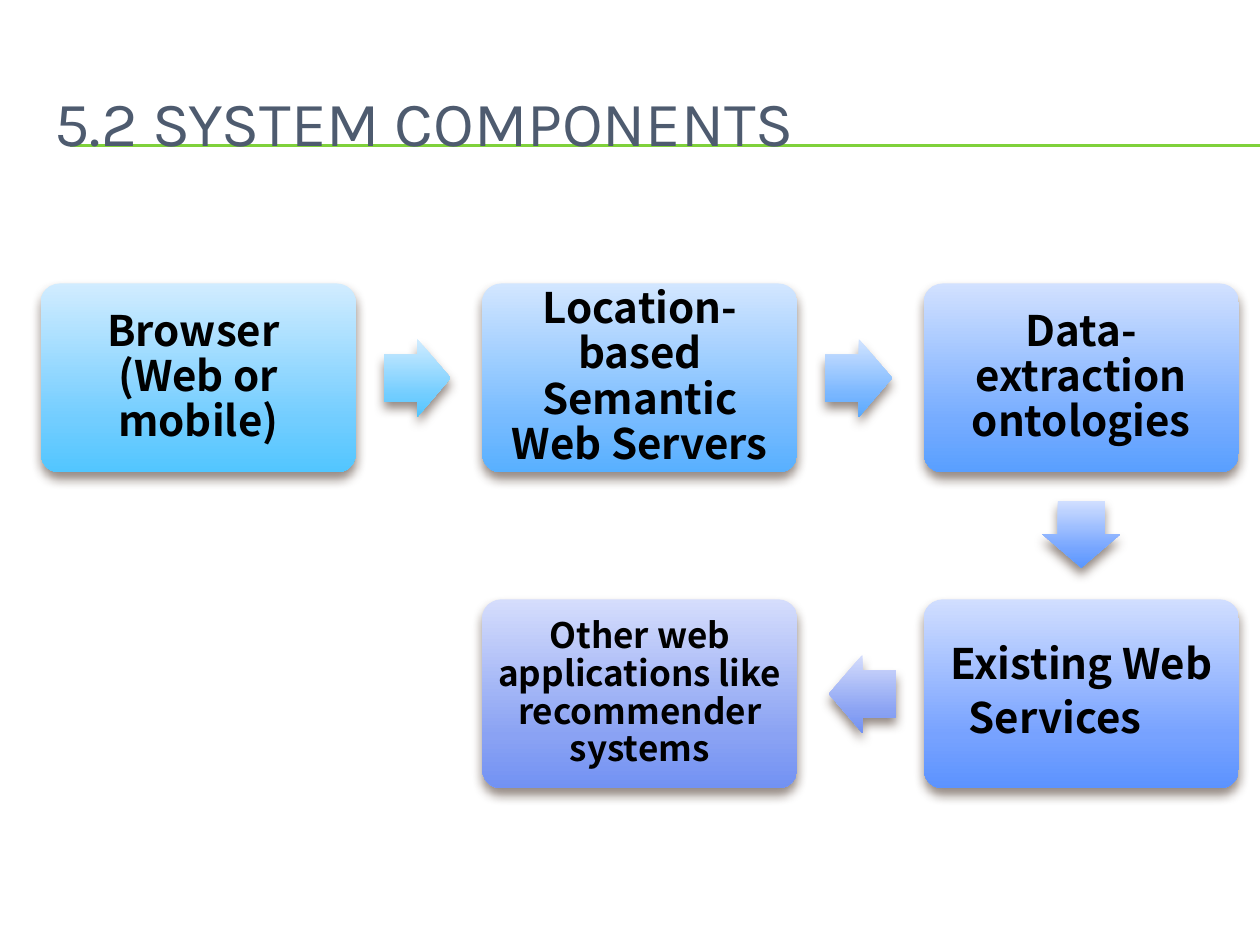
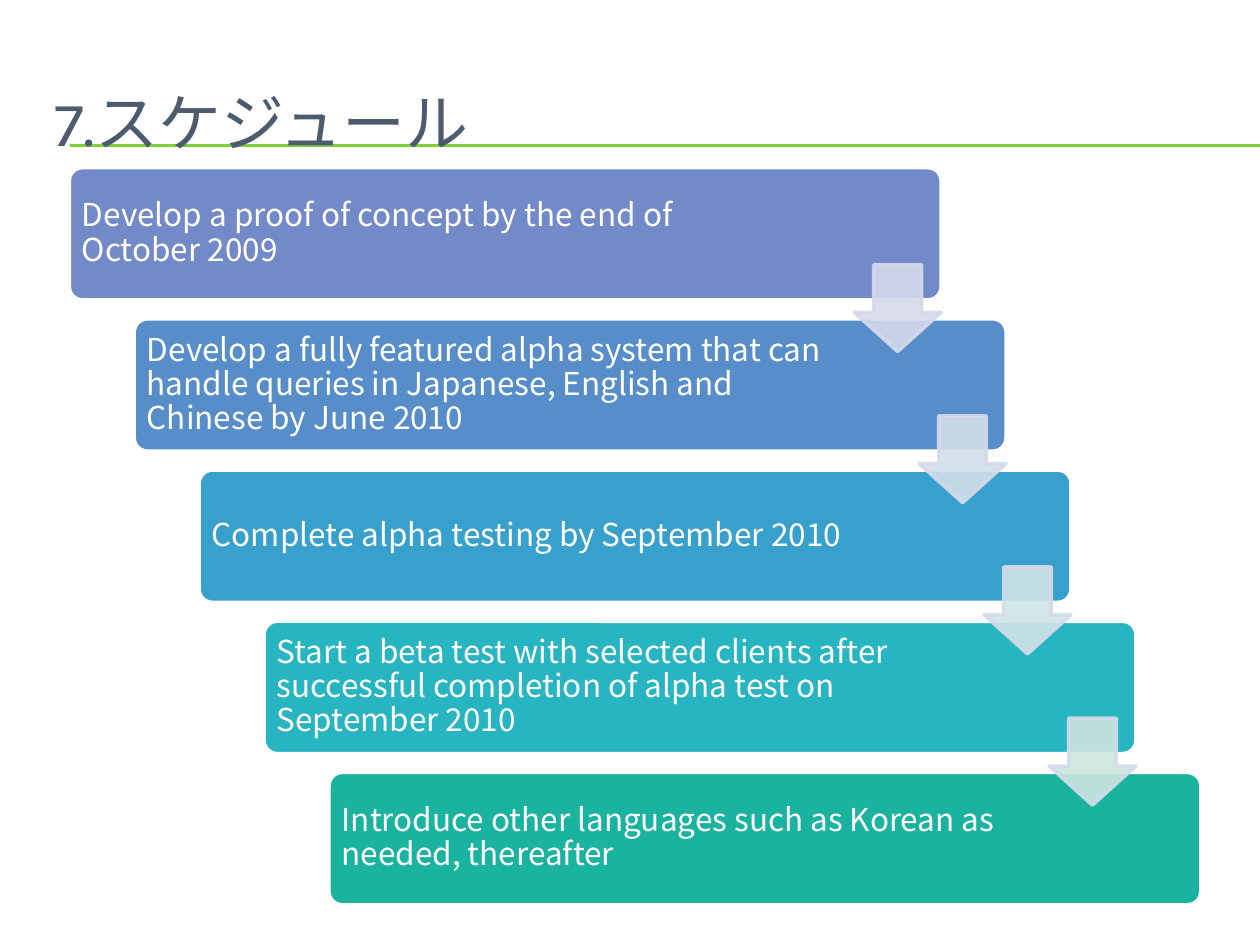
from dataclasses import dataclass
from math import atan2, cos, degrees, sin
from typing import Any

from lxml.etree import SubElement
from pptx import Presentation
from pptx.dml.color import RGBColor
from pptx.enum.shapes import MSO_CONNECTOR as Connector, MSO_SHAPE as Preset
from pptx.enum.text import MSO_ANCHOR as Anchor, MSO_AUTO_SIZE as AutoSize, PP_ALIGN as Align
from pptx.oxml.ns import qn
from pptx.util import Pt


# Colours, fonts and type sizes
@dataclass(frozen=True)
class Theme:
    title_color: str = "4E5B6F"
    rule_color: str = "7FD13B"
    shadow_color: str = "4E3B30"
    dark_text: str = "000000"
    light_text: str = "FFFFFF"
    arrow_outline: str = "D5DAEB"
    title_font: str = "Karla"
    body_font: str = "Noto Sans CJK JP"
    title_size: float = 36
    component_size: float = 24
    small_component_size: float = 20
    spacer_size: float = 30
    step_size: float = 18


THEME = Theme()
Gradient = tuple[str, str, str]


@dataclass(frozen=True)
class Box:
    left: float
    top: float
    width: float
    height: float

    @property
    def center(self) -> tuple[float, float]:
        return self.left + self.width / 2, self.top + self.height / 2

    def lengths(self) -> list[int]:
        return [Pt(value) for value in (self.left, self.top, self.width, self.height)]


@dataclass(frozen=True)
class Component:
    text: str
    column: int
    row: int
    gradient: Gradient
    size: float = THEME.component_size
    inset: float = 7.2
    spacer: str = ""

    @property
    def box(self) -> Box:
        return Box(23.3 + 252.3 * self.column, 162 + 180.5 * self.row, 180, 108)


@dataclass(frozen=True)
class Step:
    text: str
    color: str
    arrow_color: str | None = None


VIOLET: Gradient = ("D5DDFC", "8AA2F3", "7292F3")
COMPONENTS = [
    Component("Browser \n(Web or mobile)", 0, 0, ("D1ECFF", "72CDFF", "52C6FF")),
    Component("Location-based Semantic Web Servers", 1, 0, ("D2E6FF", "77BBFF", "58B0FF")),
    Component("Data-extraction ontologies", 2, 0, ("D2E1FF", "76ACFF", "599FFF")),
    Component("Existing Web Services", 2, 1, ("D1DEFF", "77A2FF", "5C93FF"), spacer="　"),
    Component("Other web applications like recommender systems", 1, 1, VIOLET,
              size=THEME.small_component_size, inset=5.8),
]
FLOW_GRADIENTS: list[Gradient] = [
    ("D1ECFF", "72CDFF", "52C6FF"),
    ("D3E4FF", "78B6FF", "5AAAFF"),
    ("D1DFFF", "76A5FF", "5A97FF"),
    VIOLET,
]
STEPS = [
    Step("Develop a proof of concept by the end of October 2009", "738AC8", "D5DAEB"),
    Step("Develop a fully featured alpha system that can handle queries in Japanese, "
         "English and Chinese by June 2010", "578EC9", "D2DFE9"),
    Step("Complete alpha testing by September 2010", "38A0CC", "CFE4E7"),
    Step("Start a beta test with selected clients after successful completion of alpha "
         "test on September 2010", "27B5C2", "CCE5DF"),
    Step("Introduce other languages such as Korean as needed, thereafter", "1AB39F"),
]


# Formatting helpers
def apply_format(target: Any, values: dict[str, Any]) -> None:
    for name, value in values.items():
        setattr(target, name, value)


def format_font(font: Any, name: str, size: float, color: str, bold: bool = False) -> None:
    apply_format(font, {"name": name, "size": Pt(size), "bold": bold})
    font.color.rgb = RGBColor.from_string(color)


def set_color_alpha(properties: Any, percent: int) -> None:
    for color in properties.iter(qn("a:srgbClr")):
        SubElement(color, qn("a:alpha"), val=str(percent * 1000))


def add_preset(slide: Any, preset: Any, box: Box, adjustments: list[float]) -> Any:
    shape = slide.shapes.add_shape(preset, *box.lengths())
    shape.shadow.inherit = False
    for index, value in enumerate(adjustments):
        shape.adjustments[index] = value
    return shape


def paint_solid(shape: Any, fill: str, line: str) -> None:
    shape.fill.solid()
    shape.fill.fore_color.rgb = RGBColor.from_string(fill)
    shape.line.color.rgb = RGBColor.from_string(line)
    shape.line.width = Pt(2)


def paint_glossy(shape: Any, colors: Gradient) -> None:
    """Vertical three-stop gradient with a soft shadow below."""
    shape.line.fill.background()
    shape.fill.gradient()
    gradient = shape.element.spPr.find(qn("a:gradFill"))
    gradient.set("rotWithShape", "0")
    for child in list(gradient):
        gradient.remove(child)
    stops = SubElement(gradient, qn("a:gsLst"))
    for position, color in zip((0, 72, 100), colors):
        stop = SubElement(stops, qn("a:gs"), pos=str(position * 1000))
        SubElement(stop, qn("a:srgbClr"), val=color)
    SubElement(gradient, qn("a:lin"), ang="5400000", scaled="0")

    effects = shape.element.spPr.find(qn("a:effectLst"))
    shadow = SubElement(effects, qn("a:outerShdw"), blurRad=str(Pt(6)), dist=str(Pt(4)),
                        dir="5400000", rotWithShape="0")
    SubElement(shadow, qn("a:srgbClr"), val=THEME.shadow_color)
    set_color_alpha(shadow, 60)


def write_text(shape: Any, text: str, size: float, color: str, align: Any, inset: float,
               right_inset: float, bold: bool = False) -> Any:
    frame = shape.text_frame
    apply_format(frame, {
        "word_wrap": True, "auto_size": AutoSize.NONE, "vertical_anchor": Anchor.MIDDLE,
        "margin_left": Pt(inset), "margin_top": Pt(inset),
        "margin_right": Pt(right_inset), "margin_bottom": Pt(inset),
    })
    paragraph = frame.paragraphs[0]
    paragraph.text = text
    apply_format(paragraph, {"alignment": align, "line_spacing": 0.9})
    for run in paragraph.runs:
        format_font(run.font, THEME.body_font, size, color, bold)
    return paragraph


# Shared slide parts
def add_title_rules(slide: Any, layout: Any) -> None:
    """Draw the double rule and move it to the layout."""
    for index, y in enumerate((82.8, 83.5)):
        rule = slide.shapes.add_connector(Connector.STRAIGHT, Pt(40.3), Pt(y), Pt(720), Pt(y))
        rule.line.color.rgb = RGBColor.from_string(THEME.rule_color)
        rule.line.width = Pt(0.75)
        SubElement(rule.element.spPr, qn("a:effectLst"))
        for properties in rule.element.iter(qn("p:cNvPr")):
            properties.set("id", str(100 + index))
        layout.shapes.element.append(rule.element)


def add_titled_slide(presentation: Any, layout: Any, text: str) -> Any:
    slide = presentation.slides.add_slide(layout)
    title = slide.shapes.title
    left, top, width, height = Box(23.8, 36, 684, 66.2).lengths()
    apply_format(title, {"left": left, "top": top, "width": width, "height": height})
    apply_format(title.text_frame, {
        "text": text, "vertical_anchor": Anchor.MIDDLE,
        "auto_size": AutoSize.NONE, "word_wrap": True,
    })
    paragraph = title.text_frame.paragraphs[0]
    paragraph.alignment = Align.LEFT
    format_font(paragraph.runs[0].font, THEME.title_font, THEME.title_size, THEME.title_color)
    for properties in title.element.iter(qn("a:rPr")):
        SubElement(properties, qn("a:ea"), typeface=THEME.body_font)
    return slide


# System components
def draw_component(slide: Any, component: Component) -> None:
    shape = add_preset(slide, Preset.ROUNDED_RECTANGLE, component.box, [0.1])
    paint_glossy(shape, component.gradient)
    paragraph = write_text(shape, component.text, component.size, THEME.dark_text,
                           Align.CENTER, component.inset, component.inset, bold=True)
    if component.spacer:
        spacer = paragraph.add_run()
        spacer.text = component.spacer
        format_font(spacer.font, THEME.title_font, THEME.spacer_size, THEME.dark_text)


def draw_flow_arrow(slide: Any, source: Box, target: Box, gradient: Gradient) -> None:
    """Point an arrow from source to target, 1 pt nearer to the source."""
    (x1, y1), (x2, y2) = source.center, target.center
    angle = atan2(y2 - y1, x2 - x1)
    center_x = (x1 + x2) / 2 - cos(angle)
    center_y = (y1 + y2) / 2 - sin(angle)
    width, height = 38.2, 44.6
    box = Box(center_x - width / 2, center_y - height / 2, width, height)
    arrow = add_preset(slide, Preset.RIGHT_ARROW, box, [0.6, 0.5])
    arrow.rotation = degrees(angle)
    paint_glossy(arrow, gradient)


def draw_components(slide: Any) -> None:
    for component in COMPONENTS:
        draw_component(slide, component)
    for source, target, gradient in zip(COMPONENTS, COMPONENTS[1:], FLOW_GRADIENTS):
        draw_flow_arrow(slide, source.box, target.box, gradient)


# Schedule staircase
def draw_schedule(slide: Any) -> None:
    bars = [Box(39.6 + 37.1 * index, 95.8 + 86.4 * index, 498.2, 75.6)
            for index in range(len(STEPS))]
    for step, bar in zip(STEPS, bars):
        shape = add_preset(slide, Preset.ROUNDED_RECTANGLE, bar, [0.1])
        paint_solid(shape, step.color, THEME.light_text)
        write_text(shape, step.text, THEME.step_size, THEME.light_text, Align.LEFT, 5, 91.4)

    side = 49.7
    for step, bar in zip(STEPS, bars):
        if step.arrow_color:
            box = Box(bar.left + bar.width - side, bar.top + 55.4, side, side)
            arrow = add_preset(slide, Preset.DOWN_ARROW, box, [0.55, 0.45])
            paint_solid(arrow, step.arrow_color, THEME.arrow_outline)
            set_color_alpha(arrow.element.spPr, 90)


def main() -> None:
    presentation = Presentation()
    apply_format(presentation, {"slide_width": Pt(720), "slide_height": Pt(540)})
    layout = presentation.slide_layouts.get_by_name("Title Only")

    components_slide = add_titled_slide(presentation, layout, "5.2 SYSTEM COMPONENTS")
    add_title_rules(components_slide, layout)
    draw_components(components_slide)

    schedule_slide = add_titled_slide(presentation, layout, "7.スケジュール")
    draw_schedule(schedule_slide)
    presentation.save("out.pptx")


if __name__ == "__main__":
    main()
